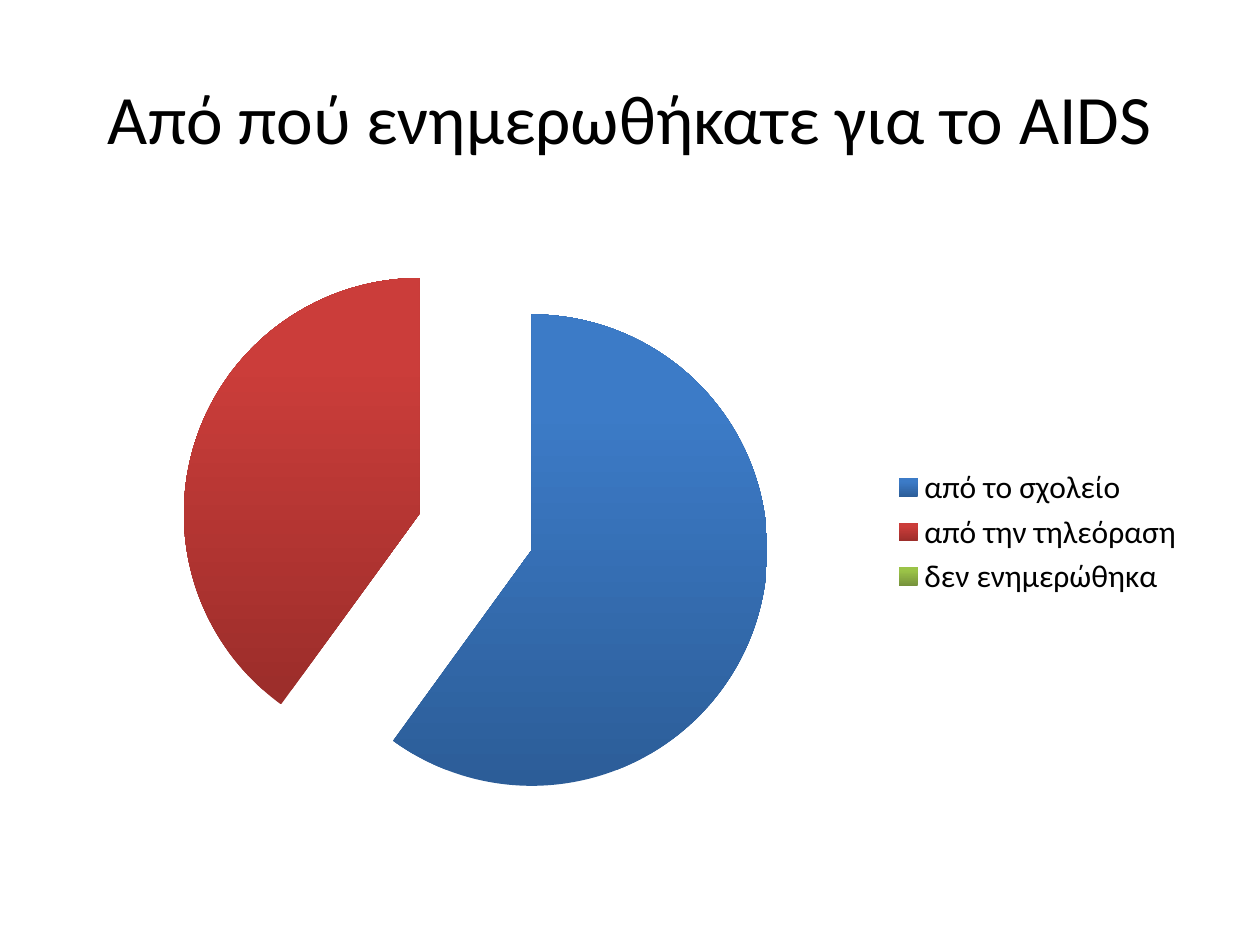
import dataclasses

import lxml.etree
import pptx
import pptx.chart.data
import pptx.dml.color
import pptx.enum.chart
import pptx.enum.text
import pptx.oxml.ns
import pptx.util

EMU_PER_PX = 914400 / 126
FONT = "Calibri"
EXPLOSION = 25

BLACK = pptx.dml.color.RGBColor(0x00, 0x00, 0x00)
BLUE = pptx.dml.color.RGBColor(0x3C, 0x7B, 0xC7)
DARK_BLUE = pptx.dml.color.RGBColor(0x2C, 0x5D, 0x98)
RED = pptx.dml.color.RGBColor(0xCB, 0x3D, 0x3A)
DARK_RED = pptx.dml.color.RGBColor(0x9B, 0x2D, 0x2A)
GREEN = pptx.dml.color.RGBColor(0x9B, 0xC3, 0x48)
DARK_GREEN = pptx.dml.color.RGBColor(0x76, 0x92, 0x3C)


@dataclasses.dataclass(frozen=True)
class Answer:
    label: str
    share: int
    light: pptx.dml.color.RGBColor
    dark: pptx.dml.color.RGBColor


ANSWERS = (
    Answer("από το σχολείο", 60, BLUE, DARK_BLUE),
    Answer("από την τηλεόραση", 40, RED, DARK_RED),
    Answer("δεν ενημερώθηκα", 0, GREEN, DARK_GREEN),
)


def px(length: int) -> pptx.util.Emu:
    return pptx.util.Emu(round(length * EMU_PER_PX))


def set_font(font, size: float, color: pptx.dml.color.RGBColor) -> None:
    font.name = FONT
    font.size = pptx.util.Pt(size)
    font.color.rgb = color


def add_text(slide, text: str, *, left: int, top: int, width: int, height: int,
             size: float, color: pptx.dml.color.RGBColor = BLACK,
             align=pptx.enum.text.PP_ALIGN.CENTER) -> None:
    frame = slide.shapes.add_textbox(px(left), px(top), px(width), px(height)).text_frame
    frame.word_wrap = True
    frame.vertical_anchor = pptx.enum.text.MSO_ANCHOR.MIDDLE
    paragraph = frame.paragraphs[0]
    paragraph.alignment = align
    run = paragraph.add_run()
    run.text = text
    set_font(run.font, size, color)


def paint_slice(point, answer: Answer) -> None:
    fill = point.format.fill
    fill.gradient()
    fill.gradient_angle = 90
    bottom, top = fill.gradient_stops
    bottom.color.rgb, bottom.position = answer.dark, 0
    top.color.rgb, top.position = answer.light, 0.8
    point.format.line.fill.background()


def explode(series, percent: int) -> None:
    explosion = lxml.etree.Element(pptx.oxml.ns.qn("c:explosion"), val=str(percent))
    series._element.find(pptx.oxml.ns.qn("c:tx")).addnext(explosion)


def add_answer_pie(slide, answers: tuple[Answer, ...], *, left: int, top: int,
                   width: int, height: int) -> None:
    shares = pptx.chart.data.CategoryChartData()
    shares.categories = [answer.label for answer in answers]
    shares.add_series("Series 1", [answer.share for answer in answers])
    chart = slide.shapes.add_chart(
        pptx.enum.chart.XL_CHART_TYPE.PIE,
        px(left), px(top), px(width), px(height), shares,
    ).chart
    set_font(chart.font, 18, BLACK)
    chart.has_title = False
    chart.has_legend = True
    chart.legend.position = pptx.enum.chart.XL_LEGEND_POSITION.RIGHT
    chart.legend.include_in_layout = False
    pie = chart.plots[0]
    pie.vary_by_categories = True
    series = pie.series[0]
    explode(series, EXPLOSION)
    for index, answer in enumerate(answers):
        paint_slice(series.points[index], answer)


def main() -> None:
    presentation = pptx.Presentation()
    presentation.slide_width = px(1260)
    presentation.slide_height = px(945)
    slide = presentation.slides.add_slide(presentation.slide_layouts[6])
    add_text(slide, "Από πού ενημερωθήκατε για το AIDS",
             left=63, top=38, width=1134, height=158, size=39.6)
    add_answer_pie(slide, ANSWERS, left=63, top=220, width=1134, height=624)
    presentation.save("out.pptx")


if __name__ == "__main__":
    main()
